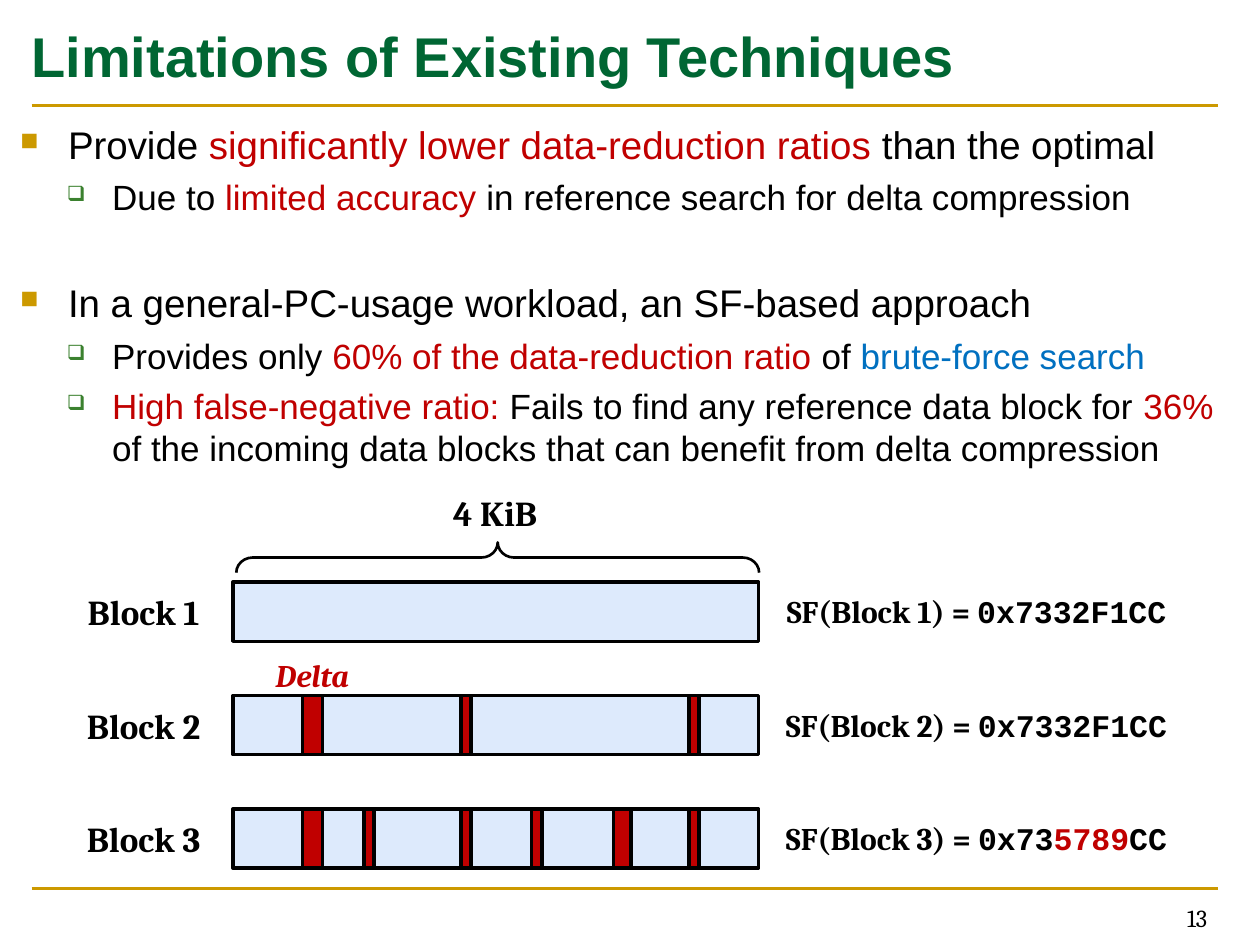
from lxml.etree import SubElement
from pptx import Presentation
from pptx.dml.color import RGBColor
from pptx.enum.shapes import MSO_CONNECTOR as Connector, MSO_SHAPE as Shape
from pptx.enum.text import MSO_ANCHOR as Anchor, PP_ALIGN as Align
from pptx.oxml.ns import qn
from pptx.util import Inches, Pt

THEME = {
    "green": "006633", "gold": "CC9900", "leaf": "3B812F", "ink": "000000",
    "red": "C00000", "blue": "0070C0", "block": "DDEAFC", "paper": "FFFFFF",
    "sans": "Arial", "serif": "Cambria", "mono": "Courier New",
    "title": 32, "point": 22, "detail": 20, "label": 20, "note": 18, "page": 14,
}

# Content: a run is (text, colour), or (text, colour, font)
TITLE = "Limitations of Existing Techniques"
PAGE = "13"
BULLETS = [  # level, space before in points, runs
    (0, 5, [("Provide ", "ink"), ("significantly lower data-reduction ratios ", "red"),
            ("than the optimal", "ink")]),
    (1, 5, [("Due to ", "ink"), ("limited accuracy ", "red"),
            ("in reference search for delta compression", "ink")]),
    (0, 35, [("In a general-PC-usage workload, an SF-based approach", "ink")]),
    (1, 5, [("Provides only ", "ink"), ("60% of the data-reduction ratio", "red"),
            (" of ", "ink"), ("brute-force search", "blue")]),
    (1, 5, [("High false-negative ratio:", "red"),
            (" Fails to find any reference data block for ", "ink"), ("36% ", "red"),
            ("of the incoming data blocks that can benefit from delta compression", "ink")]),
]
LEVELS = [  # indent, hanging, mark, mark colour, mark size %, type size
    (0.38, 0.38, "■", "gold", 65, "point"),
    (0.73, 0.36, "❑", "leaf", 60, "detail"),
]
SHARED_DELTAS = [(2.4, 0.16), (3.66, 0.08), (5.47, 0.08)]  # left, width
BLOCKS = [  # name, deltas, hash runs
    ("Block 1", [], [("0x7332F1CC ", "ink", "mono")]),
    ("Block 2", SHARED_DELTAS, [("0x7332F1CC ", "ink", "mono")]),
    ("Block 3", SHARED_DELTAS + [(2.89, 0.08), (4.87, 0.14), (4.22, 0.08)],
     [("0x73", "ink", "mono"), ("5789", "red", "mono"), ("CC ", "ink", "mono")]),
]
BLOCK_LEFT, BLOCK_WIDTH, BLOCK_HEIGHT = 1.85, 4.17, 0.47
FIRST_ROW, ROW_PITCH = 4.62, 0.9
LABEL_WIDTH, LABEL_HEIGHT, NOTE_HEIGHT = 1.1, 0.34, 0.3
RULES = [0.84, 7.05]


def color(name):
    return RGBColor.from_string(THEME[name])


def write(paragraph, runs, size, font="sans", **style):
    for text, tint, *own_font in runs:
        run = paragraph.add_run()
        run.text = text
        formats = {"size": Pt(THEME[size]), "name": THEME[own_font[0] if own_font else font]}
        for key, value in {**formats, **style}.items():
            setattr(run.font, key, value)
        run.font.color.rgb = color(tint)


def add_frame(shapes, box, insets=(0, 0), anchor=Anchor.TOP):
    """Text box with horizontal and vertical insets; returns its text frame."""
    frame = shapes.add_textbox(*map(Inches, box)).text_frame
    across, down = map(Inches, insets)
    settings = {"word_wrap": True, "vertical_anchor": anchor, "margin_left": across,
                "margin_right": across, "margin_top": down, "margin_bottom": down}
    for key, value in settings.items():
        setattr(frame, key, value)
    return frame


def add_label(shapes, box, runs, size, **style):
    paragraph = add_frame(shapes, box).paragraphs[0]
    paragraph.alignment = Align.CENTER
    write(paragraph, runs, size, "serif", bold=True, **style)


def add_outlined(shapes, kind, box, width, fill=None):
    shape = shapes.add_shape(kind, *map(Inches, box))
    shape.shadow.inherit = False
    if fill:
        shape.fill.solid()
        shape.fill.fore_color.rgb = color(fill)
    else:
        shape.fill.background()
    shape.line.color.rgb = color("ink")
    shape.line.width = Pt(width)
    return shape


def add_rule(shapes, y):
    rule = shapes.add_connector(Connector.STRAIGHT, *map(Inches, (0.25, y, 9.67, y)))
    rule.line.color.rgb = color("gold")
    rule.line.width = Pt(1.5)
    SubElement(rule._element.spPr, qn("a:effectLst"))


def set_bullet(paragraph, indent, hanging, mark, tint, percent):
    props = paragraph._p.get_or_add_pPr()
    props.set("marL", str(Inches(indent)))
    props.set("indent", str(-Inches(hanging)))
    SubElement(SubElement(props, qn("a:buClr")), qn("a:srgbClr"), val=THEME[tint])
    SubElement(props, qn("a:buSzPct"), val=str(percent * 1000))
    SubElement(props, qn("a:buChar"), char=mark)


def add_bullets(shapes):
    frame = add_frame(shapes, (0.16, 0.84, 9.61, 6.21), (0, 0.12))
    for index, (level, gap, runs) in enumerate(BULLETS):
        paragraph = frame.add_paragraph() if index else frame.paragraphs[0]
        *bullet, size = LEVELS[level]
        paragraph.level = level
        paragraph.space_before = Pt(gap)
        set_bullet(paragraph, *bullet)
        write(paragraph, runs, size)


def add_blocks(shapes):
    for row, (name, deltas, digest) in enumerate(BLOCKS):
        top = FIRST_ROW + row * ROW_PITCH
        parts = shapes.add_group_shape().shapes
        add_outlined(parts, Shape.RECTANGLE,
                     (BLOCK_LEFT, top, BLOCK_WIDTH, BLOCK_HEIGHT), 2, "block")
        add_label(parts, (0.59, top + 0.07, LABEL_WIDTH, LABEL_HEIGHT),
                  [(name, "ink")], "label")
        for left, width in deltas:
            add_outlined(parts, Shape.RECTANGLE, (left, top, width, BLOCK_HEIGHT), 2, "red")
        add_label(shapes, (6.08, top + 0.08, 3.49, NOTE_HEIGHT),
                  [(f"SF({name}) = ", "ink")] + digest, "note")


def main():
    deck = Presentation()
    deck.slide_width, deck.slide_height = Inches(10), Inches(7.5)
    slide = deck.slides.add_slide(deck.slide_layouts[6])
    slide.background.fill.solid()
    slide.background.fill.fore_color.rgb = color("paper")
    shapes = slide.shapes

    for y in RULES:
        add_rule(shapes, y)
    heading = add_frame(shapes, (0.25, 0.04, 9.42, 0.79), (0, 0.05), Anchor.MIDDLE)
    write(heading.paragraphs[0], [(TITLE, "green")], "title", bold=True)
    page = add_frame(shapes, (7.35, 7.11, 2.33, 0.34), (0.1, 0.05), Anchor.MIDDLE)
    page.paragraphs[0].alignment = Align.RIGHT
    write(page.paragraphs[0], [(PAGE, "ink")], "page", "serif")

    add_bullets(shapes)
    brace = add_outlined(shapes, Shape.RIGHT_BRACE, (3.83, 2.35, 0.24, 4.15), 1.5)
    brace.rotation = 270
    brace.adjustments[0], brace.adjustments[1] = 0.54, 0.5
    add_label(shapes, (3.38, 3.9, LABEL_WIDTH, LABEL_HEIGHT), [("4 KiB", "ink")], "label")
    add_blocks(shapes)
    add_label(shapes, (1.93, 5.21, LABEL_WIDTH, NOTE_HEIGHT), [("Delta", "red")],
              "note", italic=True)
    deck.save("out.pptx")


if __name__ == "__main__":
    main()
